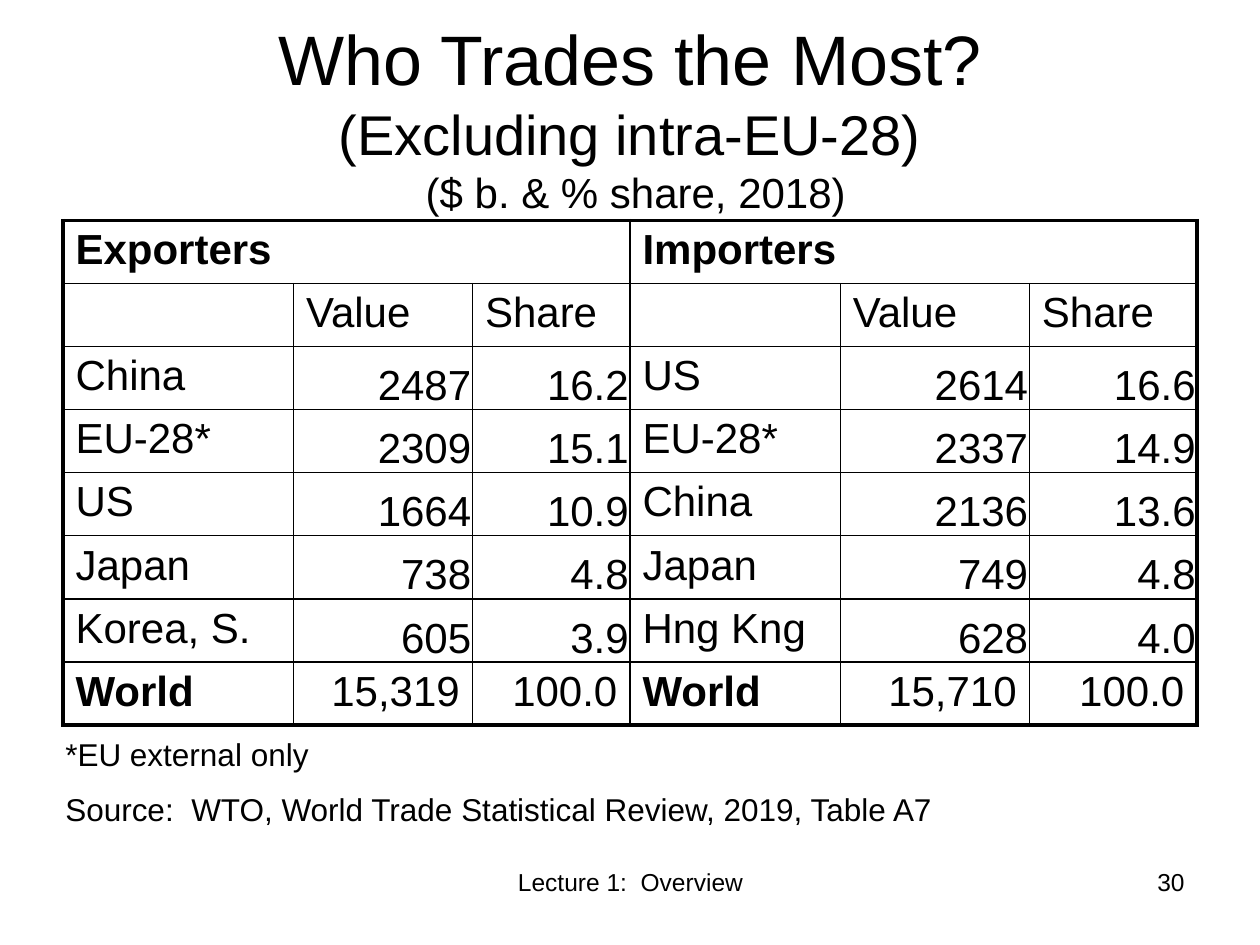
import pptx
import pptx.util
import pptx.dml.color
import pptx.enum.text
import pptx.oxml

Inches, Pt = pptx.util.Inches, pptx.util.Pt
ALIGN = pptx.enum.text.PP_ALIGN
ANCHOR = pptx.enum.text.MSO_ANCHOR

# Content
TITLE = [("Who Trades the Most?", "title"),
         ("(Excluding intra-EU-28)", "sub"),
         (" ($ b. & % share, 2018)", "body")]
ROWS = [
    ("Exporters", "", "", "Importers", "", ""),
    ("", "Value", "Share", "", "Value", "Share"),
    ("China", "2487", "16.2", "US", "2614", "16.6"),
    ("EU-28*", "2309", "15.1", "EU-28*", "2337", "14.9"),
    ("US", "1664", "10.9", "China", "2136", "13.6"),
    ("Japan", "738", "4.8", "Japan", "749", "4.8"),
    ("Korea, S.", "605", "3.9", "Hng Kng", "628", "4.0"),
    ("World", "15,319", "100.0", "World", "15,710", "100.0"),
]
WIDTHS = (1.83, 1.42, 1.25, 1.67, 1.5, 1.33)
NOTES = ["*EU external only",
         "Source:  WTO, World Trade Statistical Review, 2019, Table A7"]
FOOTER = [("Lecture 1:  Overview", (3.42, 6.83, 3.17, 0.52), ALIGN.CENTER),
          ("30", (7.17, 6.83, 2.33, 0.52), ALIGN.RIGHT)]

THEME = {
    "font": "Arial", "ink": "000000",
    "title": 40, "sub": 32, "body": 24, "note": 18, "foot": 14,
    "thin": 1, "thick": 2.25,
}
ROW_H = 0.47


def apply(item, values):
    for name, value in values.items():
        setattr(item, name, value)


def write(para, text, size, bold=False):
    run = para.add_run()
    run.text = text
    apply(run.font, {"name": THEME["font"], "size": Pt(THEME[size]), "bold": bold})
    run.font.color.rgb = pptx.dml.color.RGBColor.from_string(THEME["ink"])


def add_box(slide, place, **values):
    frame = slide.shapes.add_textbox(*map(Inches, place)).text_frame
    apply(frame, {"word_wrap": True, **values})
    return frame


def add_edge(cell, side, width):
    line = pptx.oxml.parse_xml(
        f'<a:{side} xmlns:a="http://schemas.openxmlformats.org/drawingml/2006/main"'
        f' w="{int(Pt(width))}"><a:solidFill><a:srgbClr val="{THEME["ink"]}"/>'
        f'</a:solidFill></a:{side}>')
    cell._tc.get_or_add_tcPr().append(line)


def fill_cell(cell, row, col):
    last = len(ROWS) - 1
    label = col % 3 == 0
    # Outer edges are thick, inner ones thin
    outer = {"lnL": col == 0, "lnR": col + cell.span_width == len(WIDTHS),
             "lnT": row == 0, "lnB": row == last}
    for side, edge in outer.items():
        add_edge(cell, side, THEME["thick" if edge else "thin"])
    cell.fill.background()

    para = cell.text_frame.paragraphs[0]
    para.font.size = Pt(THEME["body"])
    if row > 1 and not label:
        para.alignment = ALIGN.RIGHT
        if row < last:
            tight = Inches(0.01)
            apply(cell, {"vertical_anchor": ANCHOR.BOTTOM, "margin_left": tight,
                         "margin_right": tight, "margin_top": tight,
                         "margin_bottom": 0})
    if ROWS[row][col]:
        write(para, ROWS[row][col], "body", label and row in (0, last))


def add_grid(slide):
    grid = slide.shapes.add_table(
        len(ROWS), len(WIDTHS), Inches(0.5), Inches(1.75),
        Inches(sum(WIDTHS)), Inches(ROW_H * len(ROWS))).table
    apply(grid, {"first_row": False, "horz_banding": False})
    for col, width in zip(grid.columns, WIDTHS):
        col.width = Inches(width)
    for row in grid.rows:
        row.height = Inches(ROW_H)
    for col in (0, 3):
        grid.cell(0, col).merge(grid.cell(0, col + 2))
    for row in range(len(ROWS)):
        for col in range(len(WIDTHS)):
            fill_cell(grid.cell(row, col), row, col)


def main():
    deck = pptx.Presentation()
    apply(deck, {"slide_width": Inches(10), "slide_height": Inches(7.5)})
    slide = deck.slides.add_slide(deck.slide_layouts[6])

    # Footer and page number
    for text, place, align in FOOTER:
        para = add_box(slide, place).paragraphs[0]
        para.alignment = align
        write(para, text, "foot")

    # Title in three sizes
    frame = add_box(slide, (0.5, 0.3, 9, 1.25), vertical_anchor=ANCHOR.MIDDLE)
    para = frame.paragraphs[0]
    para.alignment = ALIGN.CENTER
    for i, (text, size) in enumerate(TITLE):
        if i:
            para.add_line_break()
        write(para, text, size)

    # Trade table
    add_grid(slide)

    # Notes below the table
    frame = add_box(slide, (0.42, 5.83, 8.17, 0.75), margin_top=0, margin_bottom=0)
    for i, text in enumerate(NOTES):
        para = frame.add_paragraph() if i else frame.paragraphs[0]
        para.space_before = Pt(10 if i else 0)
        write(para, text, "note")

    deck.save("out.pptx")


if __name__ == "__main__":
    main()
